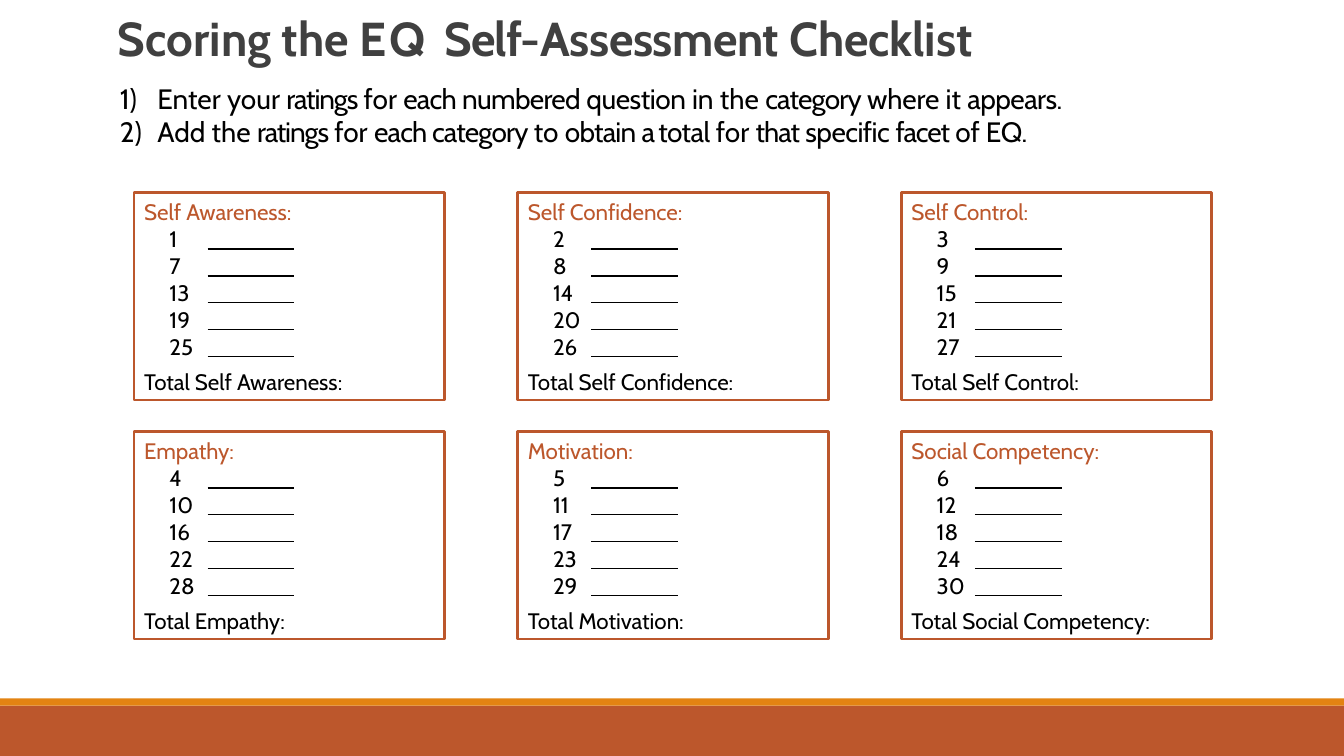
from lxml.etree import SubElement
from pptx import Presentation
from pptx.dml.color import RGBColor
from pptx.enum.shapes import MSO_CONNECTOR, MSO_SHAPE
from pptx.enum.text import MSO_ANCHOR, PP_ALIGN
from pptx.oxml.ns import qn
from pptx.util import Inches, Pt

RUST, ORANGE, BLACK, GREY = "BC572C", "E38312", "000000", "404040"

presentation = Presentation()
presentation.slide_width, presentation.slide_height = Inches(13.33), Inches(7.5)
slide = presentation.slides.add_slide(presentation.slide_layouts[6])
shapes = slide.shapes


def color(hex_string):
    return RGBColor.from_string(hex_string)


def write(frame, runs, size=16, ink=BLACK, bold=False, indent=0, before=0, numbered=False, leading=None):
    """Add a paragraph; runs is plain text or a list of (text, letter spacing in points)."""
    paragraph = frame.paragraphs[0]
    if paragraph.runs:
        paragraph = frame.add_paragraph()
    else:
        frame.word_wrap = True
        frame.vertical_anchor = MSO_ANCHOR.TOP
        frame.margin_left = frame.margin_right = frame.margin_bottom = 0
    properties = paragraph._p.get_or_add_pPr()
    properties.set("marL", str(Inches(indent)))
    if numbered:
        properties.set("indent", str(-Inches(0.37)))
        SubElement(properties, qn("a:buAutoNum"), type="arabicParenR")
    paragraph.alignment = PP_ALIGN.LEFT
    if before:
        paragraph.space_before = Pt(before)
    if leading:
        paragraph.line_spacing = Pt(leading)
    for text, spacing in [(runs, 0)] if isinstance(runs, str) else runs:
        run = paragraph.add_run()
        run.text = text
        run.font.name, run.font.size, run.font.bold = "Cabin", Pt(size), bold
        run.font.color.rgb = color(ink)
        if spacing:
            run._r.get_or_add_rPr().set("spc", str(round(spacing * 100)))


# Footer bands
for top, height, fill in [(7, 0.5, RUST), (6.93, 0.07, ORANGE)]:
    band = shapes.add_shape(MSO_SHAPE.RECTANGLE, 0, Inches(top), presentation.slide_width, Inches(height))
    band.shadow.inherit = False
    band.fill.solid()
    band.fill.fore_color.rgb = color(fill)
    band.line.fill.background()

# Title and instructions
title = shapes.add_textbox(Inches(1.17), Inches(0.07), Inches(11.91), Inches(0.6)).text_frame
title.margin_top = Inches(0.02)
write(title, [("Scoring the ", 0), ("EQ ", 2.7), ("Self-", -0.6), ("Assessment ", -0.3), ("Checklist", -0.1)],
      size=34, ink=GREY, bold=True)

instructions = [
    [("Enter your ", 0), ("ratings ", -0.8), ("for ", 0), ("each ", -0.6), ("numbered ", -0.5),
     ("question ", -0.3), ("in the ", 0), ("category ", -0.6), ("where ", -0.1), ("it ", 0), ("appears.", -0.4)],
    [("Add the ", 0), ("ratings ", -0.8), ("for ", 0), ("each category ", -0.6), ("to ", 0),
     ("obtain ", -0.6), ("a ", -2.3), ("total ", -0.4), ("for ", 0), ("that ", -0.7),
     ("specific ", -0.4), ("facet ", -0.8), ("of", 0), (" EQ.", -0.2)],
]
steps = shapes.add_textbox(Inches(1.17), Inches(0.8), Inches(9.79), Inches(0.66)).text_frame
steps.margin_top = Inches(0.02)
for instruction in instructions:
    write(steps, instruction, size=20, indent=0.39, numbered=True, leading=23.4)

# Score cards: three columns by two rows, five questions each, numbered across the cards
categories = ["Self Awareness", "Self Confidence", "Self Control",
              "Empathy", "Motivation", "Social Competency"]
for index, category in enumerate(categories):
    row, column = divmod(index, 3)
    left, top = 1.33 + 3.805 * column, 1.91 + 2.37 * row

    for answer in range(5):
        line_left, line_top = Inches(left + 0.73), Inches(top + 0.56 + 0.267 * answer)
        blank = shapes.add_connector(MSO_CONNECTOR.STRAIGHT, line_left, line_top,
                                     line_left + Inches(0.86), line_top)
        blank.line.color.rgb = color(BLACK)
        blank.line.width = Pt(1)
        SubElement(blank._element.spPr, qn("a:effectLst"))

    card = shapes.add_shape(MSO_SHAPE.RECTANGLE, Inches(left), Inches(top), Inches(3.08), Inches(2.06))
    card.shadow.inherit = False
    card.fill.background()
    card.line.color.rgb = color(RUST)
    card.line.width = Pt(2)
    card.text_frame.margin_top = Inches(0.06)
    write(card.text_frame, f"{category}:", ink=RUST, indent=0.1)
    for question in range(index + 1, 31, 6):
        write(card.text_frame, str(question), indent=0.35)
    write(card.text_frame, f"Total {category}:", indent=0.1, before=6)

presentation.save("out.pptx")
